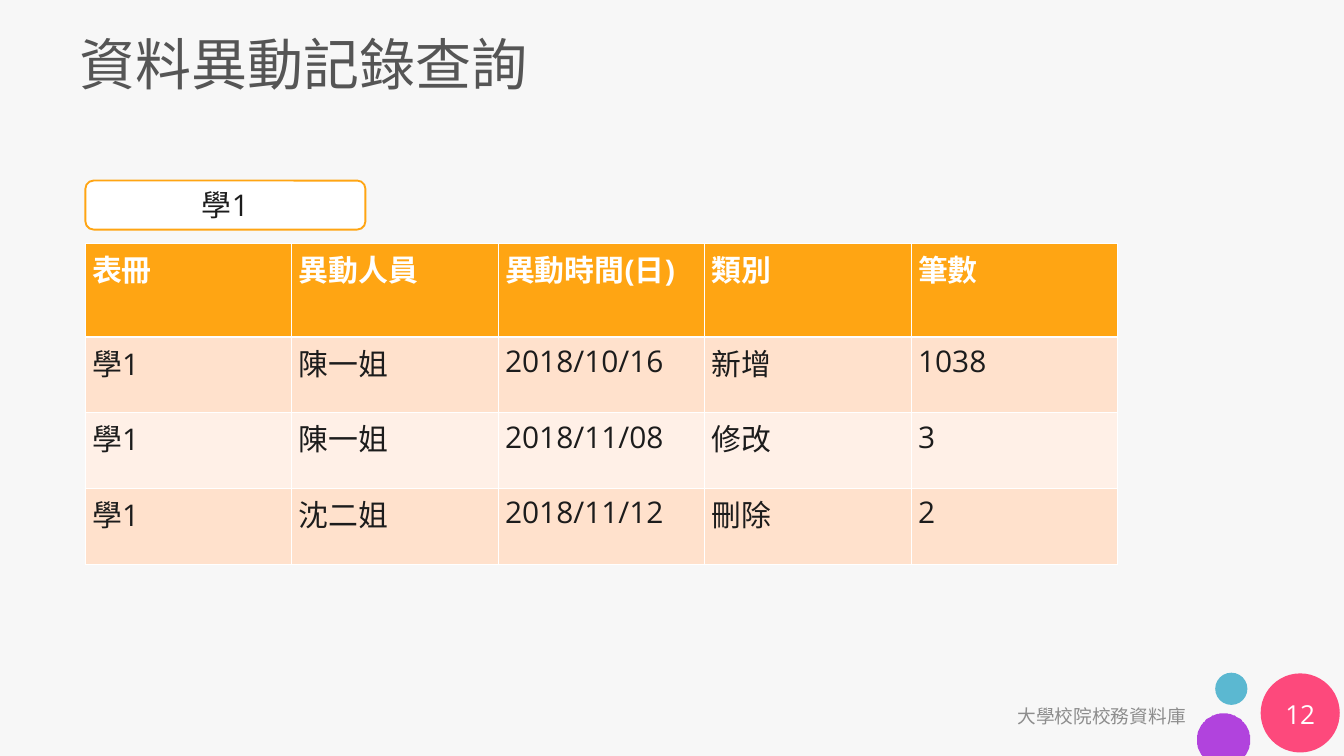
from dataclasses import dataclass
from math import asin, cos, pi, sin

from pptx import Presentation
from pptx.dml.color import RGBColor
from pptx.enum.shapes import MSO_SHAPE
from pptx.enum.text import MSO_ANCHOR, MSO_AUTO_SIZE, PP_ALIGN
from pptx.oxml.ns import qn
from pptx.util import Pt
from lxml.etree import SubElement

EMU_PER_PX = 9525
WIDTH, HEIGHT = 1920, 1080

WHITE, INK, ORANGE = "FFFFFF", "1C1C1C", "FFA513"
BANDS = ("FFE1CC", "FFF0E7")
LATIN, HEADING = "Open Sans", "Arial"

ROWS = (
    ("表冊", "異動人員", "異動時間(日)", "類別", "筆數"),
    ("學1", "陳一姐", "2018/10/16", "新增", "1038"),
    ("學1", "陳一姐", "2018/11/08", "修改", "3"),
    ("學1", "沈二姐", "2018/11/12", "刪除", "2"),
)
TABLE_LEFT, TABLE_TOP, COLUMN_WIDTH, ROW_HEIGHT = 122, 348, 295, 108


@dataclass(frozen=True)
class Box:
    left: int
    top: int
    width: int
    height: int

    def emu(self) -> tuple[int, ...]:
        return tuple(px(n) for n in (self.left, self.top, self.width, self.height))


@dataclass(frozen=True)
class Style:
    size: int
    color: str
    font: str = LATIN
    bold: bool = False
    align: PP_ALIGN = PP_ALIGN.LEFT


@dataclass(frozen=True)
class Label:
    text: str
    box: Box
    style: Style


LABELS = (
    Label("大學校院校務資料庫", Box(1103, 994, 608, 58),
          Style(20, "8D8D8D", HEADING, align=PP_ALIGN.RIGHT)),
    Label("12", Box(1801, 991, 113, 58), Style(28, WHITE, align=PP_ALIGN.CENTER)),
)
DOTS = (
    (Box(1736, 961, 46, 46), "5BB8D1"),
    (Box(1801, 962, 113, 113), "FD497C"),
)


def px(length: float) -> int:
    return round(length * EMU_PER_PX)


def rgb(color: str) -> RGBColor:
    return RGBColor.from_string(color)


def paint(shape, color: str) -> None:
    """Give a shape a plain fill with no line or shadow."""
    shape.shadow.inherit = False
    shape.fill.solid()
    shape.fill.fore_color.rgb = rgb(color)
    shape.line.fill.background()


def write(frame, text: str, style: Style) -> None:
    frame.text = text
    frame.word_wrap = True
    paragraph = frame.paragraphs[0]
    paragraph.alignment = style.align
    for span in paragraph.runs:
        span.font.size = Pt(style.size)
        span.font.name = style.font
        span.font.bold = style.bold
        span.font.color.rgb = rgb(style.color)


def place_text(shape, label: Label) -> None:
    """Position a text shape, centre it vertically and fill in its label."""
    shape.left, shape.top, shape.width, shape.height = label.box.emu()
    frame = shape.text_frame
    write(frame, label.text, label.style)
    frame.auto_size = MSO_AUTO_SIZE.NONE
    frame.vertical_anchor = MSO_ANCHOR.MIDDLE
    frame.margin_left = frame.margin_right = px(17)
    frame.margin_top = frame.margin_bottom = px(9)


def add_cut_circle(page, center: tuple[int, int], radius: int, color: str) -> None:
    """Draw a circle cut flat where it meets the bottom of the slide."""
    steps = 72
    start = asin((HEIGHT - center[1]) / radius)
    angles = [start - (pi + 2 * start) * step / steps for step in range(steps + 1)]
    points = [(center[0] + radius * cos(a), center[1] + radius * sin(a)) for a in angles]
    builder = page.shapes.build_freeform(*points[0], scale=EMU_PER_PX)
    builder.add_line_segments(points[1:], close=True)
    paint(builder.convert_to_shape(), color)


def add_borders(cell, top: int, bottom: int) -> None:
    """Add white cell borders; must run before the cell is filled."""
    properties = cell._tc.get_or_add_tcPr()
    for side, points in (("L", 1), ("R", 1), ("T", top), ("B", bottom)):
        line = SubElement(properties, qn(f"a:ln{side}"), w=str(Pt(points)))
        fill = SubElement(line, qn("a:solidFill"))
        SubElement(fill, qn("a:srgbClr"), val=WHITE)


def add_records(page) -> None:
    columns = len(ROWS[0])
    box = Box(TABLE_LEFT, TABLE_TOP, COLUMN_WIDTH * columns, ROW_HEIGHT * len(ROWS))
    table = page.shapes.add_table(len(ROWS), columns, *box.emu()).table
    for r, values in enumerate(ROWS):
        header = r == 0
        style = Style(32, WHITE if header else INK, bold=header)
        for c, value in enumerate(values):
            cell = table.cell(r, c)
            write(cell.text_frame, value, style)
            add_borders(cell, top=3 if r == 1 else 1, bottom=3 if header else 1)
            cell.fill.solid()
            cell.fill.fore_color.rgb = rgb(ORANGE if header else BANDS[(r - 1) % 2])


def add_form_tag(page) -> None:
    box = Box(122, 258, 400, 70)
    tag = page.shapes.add_shape(MSO_SHAPE.ROUNDED_RECTANGLE, *box.emu())
    paint(tag, WHITE)
    tag.line.color.rgb = rgb(ORANGE)
    tag.line.width = Pt(2)
    place_text(tag, Label("學1", box, Style(32, INK, align=PP_ALIGN.CENTER)))


def main() -> None:
    deck = Presentation()
    deck.slide_width, deck.slide_height = px(WIDTH), px(HEIGHT)
    page = deck.slides.add_slide(deck.slide_layouts[5])
    page.background.fill.solid()
    page.background.fill.fore_color.rgb = rgb("F7F7F7")

    for box, color in DOTS:
        paint(page.shapes.add_shape(MSO_SHAPE.OVAL, *box.emu()), color)
    add_cut_circle(page, (1748, 1057), 38, "B143DD")

    place_text(page.shapes.title, Label("資料異動記錄查詢", Box(96, 26, 1733, 127),
                                        Style(60, "555555", HEADING)))
    for label in LABELS:
        place_text(page.shapes.add_textbox(*label.box.emu()), label)
    add_records(page)
    add_form_tag(page)
    deck.save("out.pptx")


if __name__ == "__main__":
    main()
